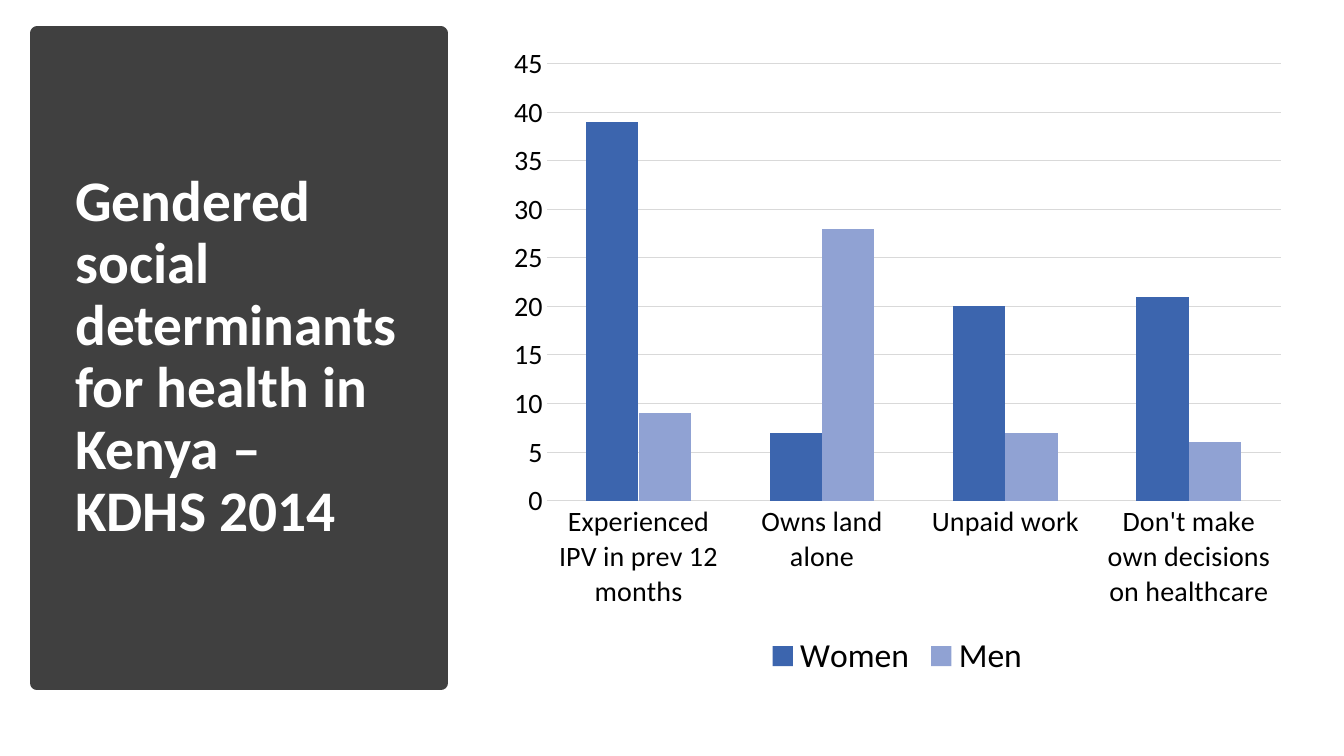
import dataclasses

import pptx
import pptx.chart.data
import pptx.dml.color
import pptx.enum.chart
import pptx.enum.shapes
import pptx.enum.text
import pptx.util


@dataclasses.dataclass(frozen=True)
class Theme:
    font: str = "Calibri"
    panel: str = "404040"
    title: str = "FFFFFF"
    text: str = "000000"
    grid: str = "D9D9D9"
    women: str = "3C65AE"
    men: str = "90A2D3"
    title_size: float = 41
    axis_size: float = 20
    legend_size: float = 24
    panel_line: float = 10
    grid_line: float = 0.75


THEME = Theme()
TITLE = "Gendered social determinants for health in Kenya – KDHS 2014"
CATEGORIES = [
    "Experienced IPV in prev 12 months",
    "Owns land alone",
    "Unpaid work",
    "Don't make own decisions on healthcare",
]
SERIES = [
    ("Women", [39, 7, 20, 21], THEME.women),
    ("Men", [9, 28, 7, 6], THEME.men),
]


def rgb(value):
    return pptx.dml.color.RGBColor.from_string(value)


def inches(*lengths):
    return [pptx.util.Inches(length) for length in lengths]


def style_font(font, size, color, bold=False):
    font.name = THEME.font
    font.size = pptx.util.Pt(size)
    font.bold = bold
    font.color.rgb = rgb(color)


def style_line(line, color, width):
    line.color.rgb = rgb(color)
    line.width = pptx.util.Pt(width)


def add_title_panel(page, left, top, width, height):
    # Dark panel
    panel = page.shapes.add_shape(
        pptx.enum.shapes.MSO_SHAPE.RECTANGLE, *inches(left, top, width, height))
    panel.shadow.inherit = False
    panel.fill.solid()
    panel.fill.fore_color.rgb = rgb(THEME.panel)
    style_line(panel.line, THEME.panel, THEME.panel_line)

    # Title, inset within the panel
    inset_x, inset_y = 0.07 * width, 0.055 * height
    box = page.shapes.add_textbox(*inches(
        left + inset_x, top + inset_y, 0.865 * width, height - 2 * inset_y))
    frame = box.text_frame
    frame.word_wrap = True
    frame.vertical_anchor = pptx.enum.text.MSO_ANCHOR.MIDDLE
    para = frame.paragraphs[0]
    para.line_spacing = 0.9
    span = para.add_run()
    span.text = TITLE
    style_font(span.font, THEME.title_size, THEME.title, bold=True)


def add_determinants_chart(page, left, top, width, height):
    data = pptx.chart.data.CategoryChartData()
    data.categories = CATEGORIES
    for name, values, _ in SERIES:
        data.add_series(name, values)
    chart = page.shapes.add_chart(
        pptx.enum.chart.XL_CHART_TYPE.COLUMN_CLUSTERED,
        *inches(left, top, width, height), data).chart
    chart.has_title = False
    style_font(chart.font, THEME.axis_size, THEME.text)

    # Columns
    plot = chart.plots[0]
    plot.gap_width = 150
    plot.overlap = 0
    plot.vary_by_categories = False
    for series, (_, _, color) in zip(plot.series, SERIES):
        series.format.fill.solid()
        series.format.fill.fore_color.rgb = rgb(color)

    # Axes and gridlines
    for axis in (chart.category_axis, chart.value_axis):
        axis.major_tick_mark = pptx.enum.chart.XL_TICK_MARK.NONE
        axis.minor_tick_mark = pptx.enum.chart.XL_TICK_MARK.NONE
        style_font(axis.tick_labels.font, THEME.axis_size, THEME.text)
    style_line(chart.category_axis.format.line, THEME.grid, THEME.grid_line)
    scale = chart.value_axis
    scale.minimum_scale, scale.maximum_scale, scale.major_unit = 0, 45, 5
    scale.format.line.fill.background()
    style_line(scale.major_gridlines.format.line, THEME.grid, THEME.grid_line)

    # Legend
    chart.has_legend = True
    chart.legend.position = pptx.enum.chart.XL_LEGEND_POSITION.BOTTOM
    chart.legend.include_in_layout = False
    style_font(chart.legend.font, THEME.legend_size, THEME.text)


def main():
    deck = pptx.Presentation()
    deck.slide_width, deck.slide_height = inches(13.33, 7.5)
    page = deck.slides.add_slide(deck.slide_layouts[6])
    top, height = 0.33, 6.45
    add_title_panel(page, 0.37, top, 4, height)
    add_determinants_chart(page, 4.94, top, 7.92, height)
    deck.save("out.pptx")


if __name__ == "__main__":
    main()
